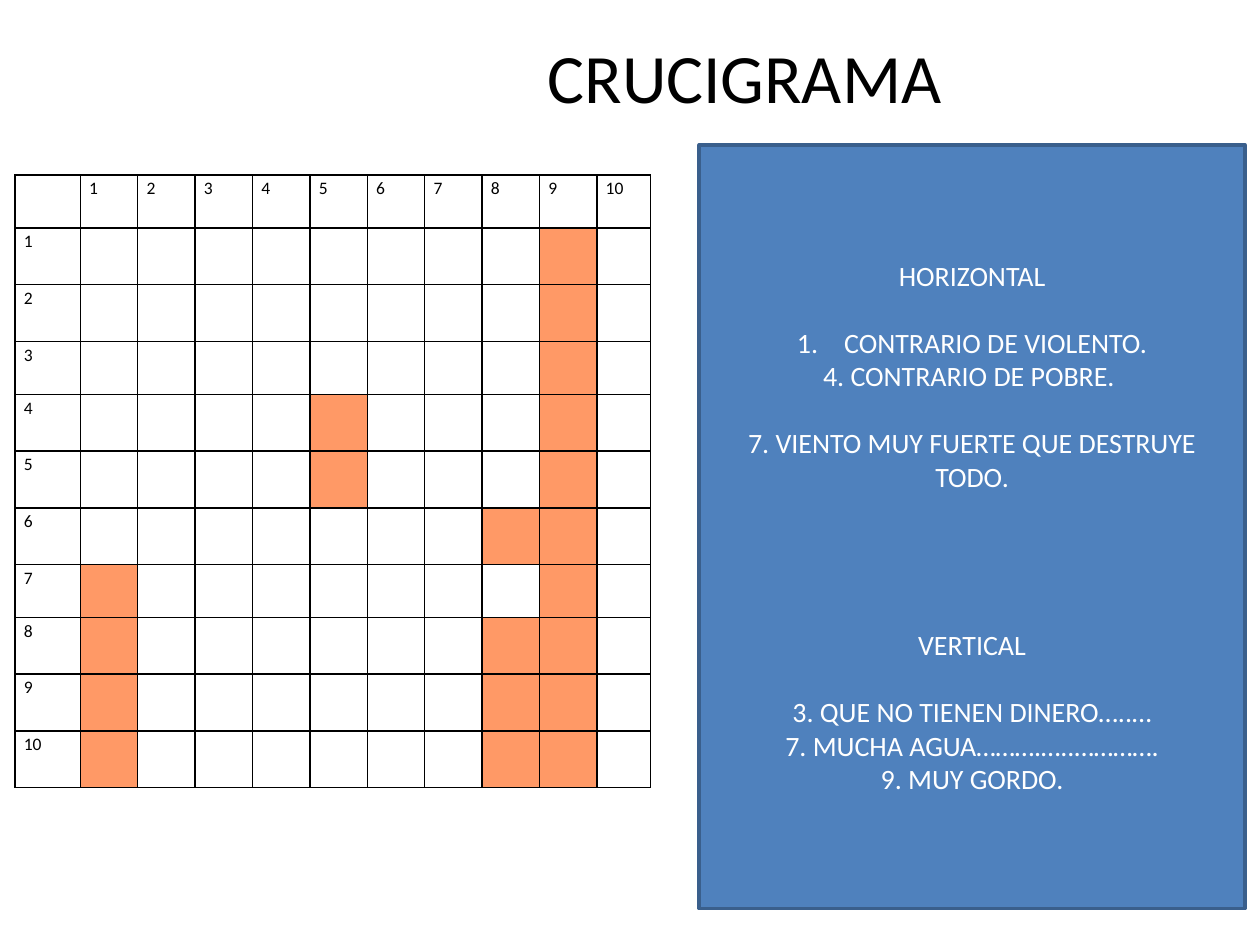
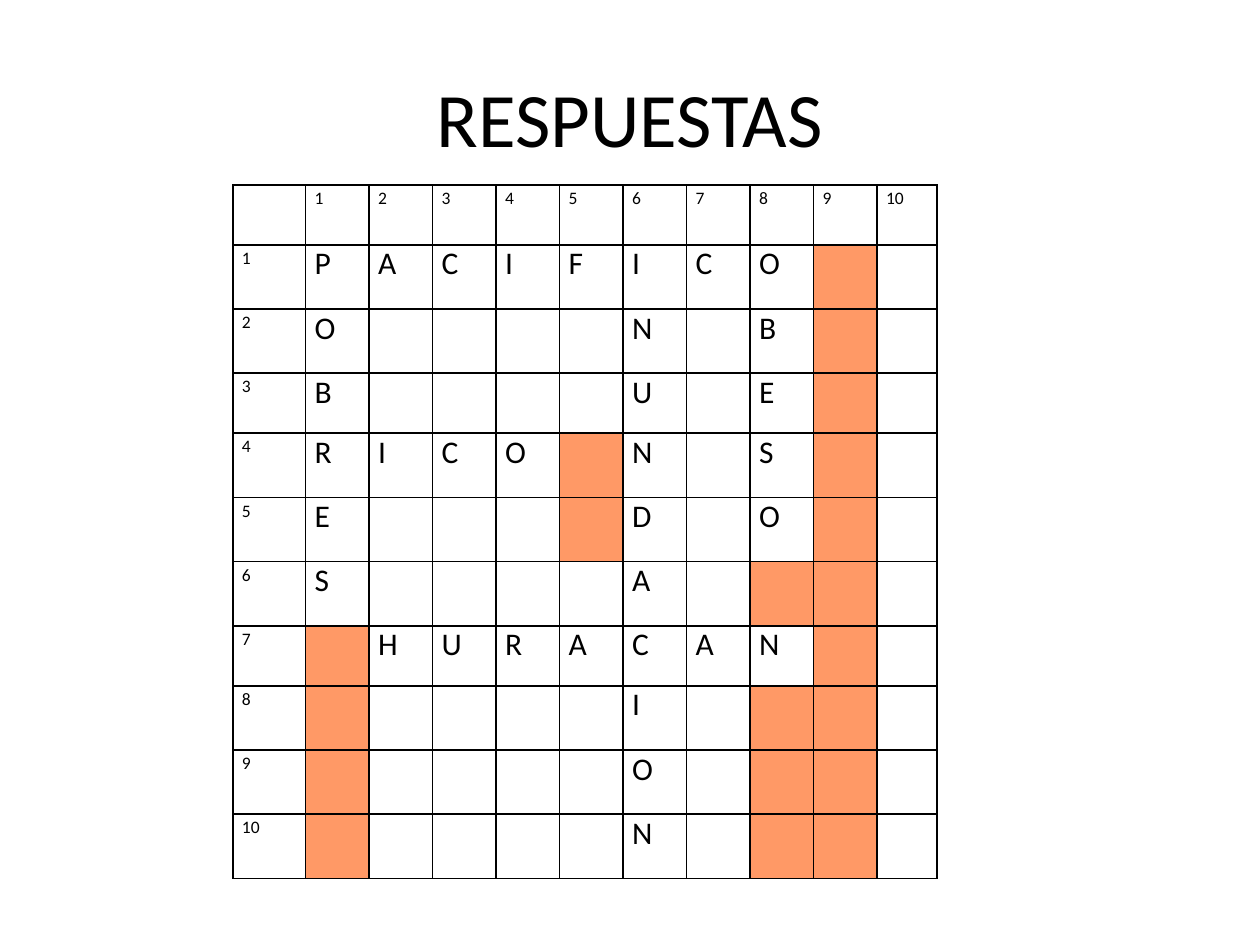
from dataclasses import dataclass

from lxml import etree
from pptx import Presentation
from pptx.dml.color import RGBColor
from pptx.enum import shapes, text
from pptx.oxml import ns
from pptx.util import Pt

COLORS = {
    "ink": "000000",
    "paper": "FFFFFF",
    "blocked": "FF9966",
    "panel": "4F81BD",
    "panel_edge": "3A5F8C",
}
FONT = "Calibri"
SIDE = 10  # numbered rows and columns in the crossword
SHORT_ROWS = {0, 3, 7}
CLUE_SIZE = 16
CLUE_LINE = 19.2
CLUE_INDENT = 27


@dataclass(frozen=True)
class Box:
    left: float
    top: float
    width: float
    height: float

    def lengths(self) -> list:
        return [Pt(v) for v in (self.left, self.top, self.width, self.height)]


@dataclass(frozen=True)
class Grid:
    left: float
    top: float
    label_width: float
    square_width: float
    last_width: float
    short_height: float
    row_height: float

    def widths(self) -> list[float]:
        return [self.label_width] + [self.square_width] * (SIDE - 1) + [self.last_width]

    def heights(self) -> list[float]:
        return [self.short_height if row in SHORT_ROWS else self.row_height
                for row in range(SIDE + 1)]


@dataclass(frozen=True)
class Answer:
    word: str
    row: int
    col: int
    down: bool = False

    def letters(self) -> dict[tuple[int, int], str]:
        return {(self.row + i * self.down, self.col + i * (not self.down)): letter
                for i, letter in enumerate(self.word)}


@dataclass(frozen=True)
class Clue:
    text: str
    lines_before: int = 0
    indented: bool = False
    numbered: bool = False


# Blocked squares: column -> rows
BLOCKED = {1: range(7, 11), 5: (4, 5), 8: (6, 8, 9, 10), 9: range(1, 11)}

ANSWERS = [
    Answer("PACIFICO", 1, 1),
    Answer("RICO", 4, 1),
    Answer("HURACAN", 7, 2),
    Answer("POBRES", 1, 1, down=True),
    Answer("INUNDACION", 1, 6, down=True),
    Answer("OBESO", 1, 8, down=True),
]

CLUES = [
    Clue("HORIZONTAL"),
    Clue("CONTRARIO DE VIOLENTO.", 1, indented=True, numbered=True),
    Clue("4. CONTRARIO DE POBRE. ", indented=True),
    Clue("7. VIENTO MUY FUERTE QUE DESTRUYE TODO.", 1),
    Clue("VERTICAL", 4),
    Clue("3. QUE NO TIENEN DINERO…..…", 1),
    Clue("7. MUCHA AGUA……….…..…………."),
    Clue("9. MUY GORDO."),
]


def rgb(name: str) -> RGBColor:
    return RGBColor.from_string(COLORS[name])


def add_run(paragraph, content: str, size: float, color: str = "ink") -> None:
    run = paragraph.add_run()
    run.text = content
    run.font.name = FONT
    run.font.size = Pt(size)
    run.font.color.rgb = rgb(color)


def add_title(slide, title: str, box: Box, size: float) -> None:
    frame = slide.shapes.add_textbox(*box.lengths()).text_frame
    frame.word_wrap = True
    frame.vertical_anchor = text.MSO_ANCHOR.MIDDLE
    heading = frame.paragraphs[0]
    heading.alignment = text.PP_ALIGN.CENTER
    add_run(heading, title, size)


def add_borders(cell) -> None:
    properties = cell._tc.get_or_add_tcPr()
    for position, side in enumerate(("lnL", "lnR", "lnT", "lnB")):
        line = etree.Element(ns.qn(f"a:{side}"), w=str(Pt(1)))
        fill = etree.SubElement(line, ns.qn("a:solidFill"))
        etree.SubElement(fill, ns.qn("a:srgbClr"), val=COLORS["ink"])
        properties.insert(position, line)


def add_crossword(slide, grid: Grid, letters: dict[tuple[int, int], str]) -> None:
    widths, heights = grid.widths(), grid.heights()
    box = Box(grid.left, grid.top, sum(widths), sum(heights))
    table = slide.shapes.add_table(SIDE + 1, SIDE + 1, *box.lengths()).table
    table.first_row = table.horz_banding = False
    for column, width in zip(table.columns, widths):
        column.width = Pt(width)
    for row, height in zip(table.rows, heights):
        row.height = Pt(height)

    for r in range(SIDE + 1):
        for c in range(SIDE + 1):
            cell = table.cell(r, c)
            cell.margin_left = cell.margin_right = Pt(5.1)
            cell.margin_top = cell.margin_bottom = Pt(0)
            is_label = r == 0 or c == 0
            if is_label:
                cell.fill.background()
            else:
                cell.fill.solid()
                blocked = r in BLOCKED.get(c, ())
                cell.fill.fore_color.rgb = rgb("blocked" if blocked else "paper")
            add_borders(cell)

            paragraph = cell.text_frame.paragraphs[0]
            if is_label and r + c:
                paragraph.line_spacing = 1.15
                add_run(paragraph, str(r + c), 10)
            elif (r, c) in letters:
                add_run(paragraph, letters[r, c], 18)


def add_clues(slide, box: Box, clues: list[Clue]) -> None:
    panel = slide.shapes.add_shape(shapes.MSO_SHAPE.RECTANGLE, *box.lengths())
    panel.shadow.inherit = False
    panel.fill.solid()
    panel.fill.fore_color.rgb = rgb("panel")
    panel.line.color.rgb = rgb("panel_edge")
    panel.line.width = Pt(2)
    frame = panel.text_frame
    frame.word_wrap = True
    frame.vertical_anchor = text.MSO_ANCHOR.MIDDLE
    for i, clue in enumerate(clues):
        paragraph = frame.add_paragraph() if i else frame.paragraphs[0]
        paragraph.alignment = text.PP_ALIGN.CENTER
        if clue.lines_before:
            paragraph.space_before = Pt(clue.lines_before * CLUE_LINE)
        properties = paragraph._p.get_or_add_pPr()
        if clue.indented:
            properties.set("marL", str(Pt(CLUE_INDENT)))
            properties.set("indent", str(-Pt(CLUE_INDENT)))
        if clue.numbered:
            etree.SubElement(properties, ns.qn("a:buAutoNum"), type="arabicPeriod")
        add_run(paragraph, clue.text, CLUE_SIZE, "paper")


def main() -> None:
    deck = Presentation()
    deck.slide_width, deck.slide_height = Pt(720), Pt(540)
    blank = deck.slide_layouts[6]

    # Empty crossword with its clues
    puzzle = deck.slides.add_slide(blank)
    add_title(puzzle, "CRUCIGRAMA", Box(167, 21.6, 517, 44), 39.6)
    add_clues(puzzle, Box(399.6, 82.8, 311.8, 436.4), CLUES)
    add_crossword(puzzle, Grid(8.5, 100, 37.4, 32.8, 30.6, 30.3, 32.4), {})

    # Solved crossword
    solution = deck.slides.add_slide(blank)
    add_title(solution, "RESPUESTAS", Box(36, 21.6, 648, 90), 44)
    letters = {square: letter for answer in ANSWERS
               for square, letter in answer.letters().items()}
    add_crossword(solution, Grid(133.2, 105.6, 41.5, 36.3, 34.2, 34.3, 36.7), letters)

    deck.save("out.pptx")


if __name__ == "__main__":
    main()
